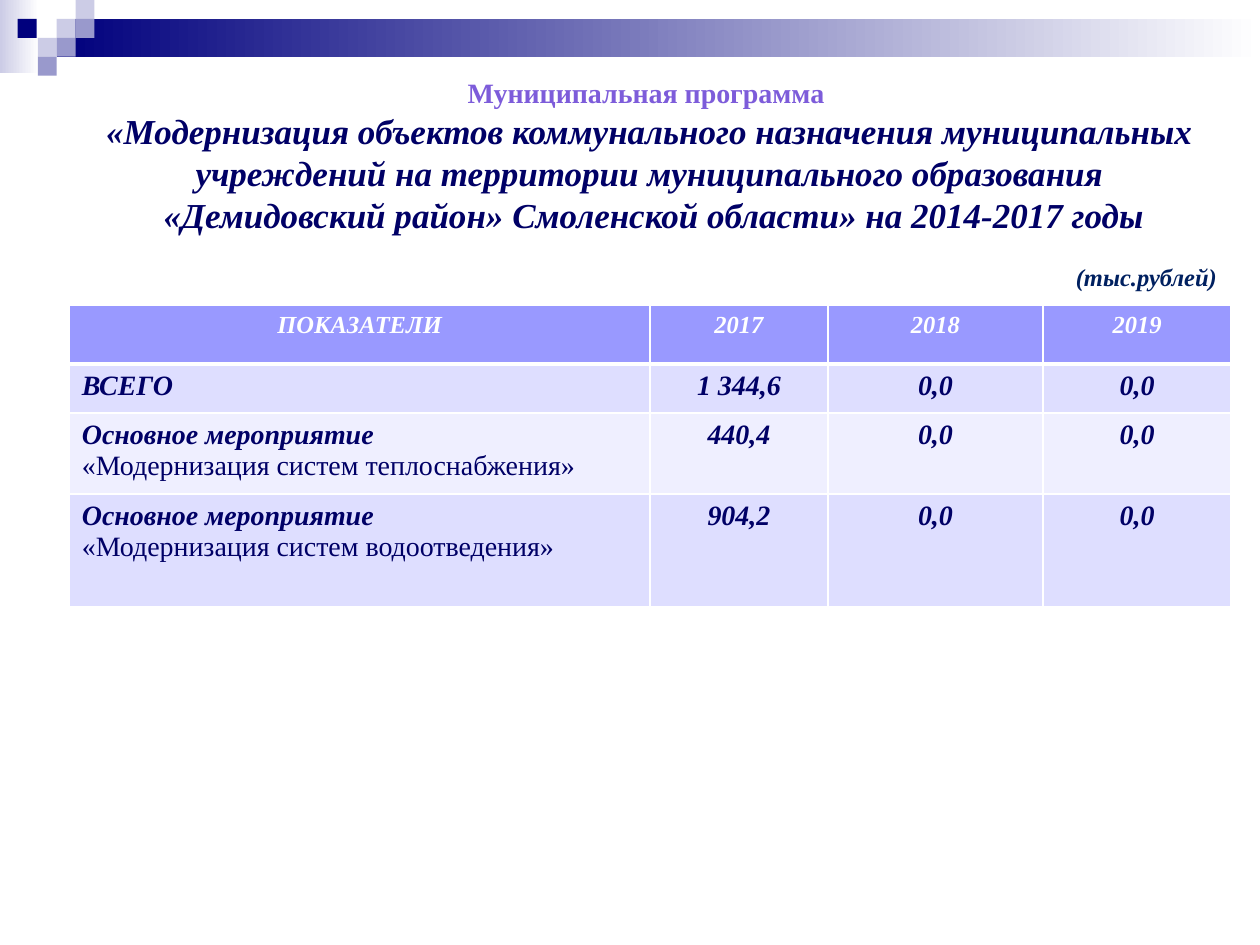
from dataclasses import dataclass

from lxml.etree import fromstring
from pptx import Presentation
from pptx.dml.color import RGBColor
from pptx.enum.shapes import MSO_SHAPE
from pptx.enum.text import MSO_AUTO_SIZE, PP_ALIGN
from pptx.util import Inches, Pt


@dataclass(frozen=True)
class Theme:
    """Colours, font and type sizes of the slide."""
    font: str = "Times New Roman"
    navy: str = "00007D"
    pale: str = "CCCCE6"
    mid: str = "9999CC"
    white: str = "FFFFFF"
    violet: str = "7D5CDA"
    ink: str = "000066"
    note: str = "002060"
    head: str = "9999FF"
    bands: tuple = ("DEDEFF", "EFEFFF")
    small: int = 14
    body: int = 16
    large: int = 20


THEME = Theme()
NS = "http://schemas.openxmlformats.org/drawingml/2006/main"
SIDE = 0.15
TILES = [
    (0.45, 0.15, THEME.pale), (0.6, 0, THEME.pale), (0.6, 0.15, THEME.mid),
    (0.3, 0.3, THEME.pale), (0.14, 0.15, THEME.navy),
    (0.45, 0.3, THEME.mid), (0.3, 0.45, THEME.mid),
]
BANDS = [((0, 0, 0.31, 0.58), THEME.pale), ((0.45, 0.15, 9.55, 0.3), THEME.navy)]
COLS = [4.61, 1.41, 1.71, 1.49]
ROWS = [0.47, 0.39, 0.64, 0.9]
STEP = "Основное мероприятие"
DATA = [
    (["ПОКАЗАТЕЛИ"], "2017", "2018", "2019"),
    (["ВСЕГО"], "1 344,6", "0,0", "0,0"),
    ([STEP, "«Модернизация систем теплоснабжения»"], "440,4", "0,0", "0,0"),
    ([STEP, "«Модернизация систем водоотведения»"], "904,2", "0,0", "0,0"),
]


def style(size, color, bold=True, italic=True):
    """Return the format values of a run."""
    return {"size": Pt(size), "color": color, "bold": bold, "italic": italic,
            "name": THEME.font}


TITLE = [
    ("Муниципальная программа ", style(THEME.body, THEME.violet, italic=False)),
    ("«Модернизация объектов коммунального назначения муниципальных учреждений "
     "на территории муниципального образования", style(THEME.large, THEME.ink)),
    (" «Демидовский район» Смоленской области» на 2014-2017 годы",
     style(THEME.large, THEME.ink)),
]


def write(frame, lines, align):
    """Fill a text frame with one styled paragraph per line."""
    for i, (text, form) in enumerate(lines):
        para = frame.add_paragraph() if i else frame.paragraphs[0]
        para.alignment = align
        run = para.add_run()
        run.text = text
        for key, value in form.items():
            if key == "color":
                run.font.color.rgb = RGBColor.from_string(value)
            else:
                setattr(run.font, key, value)


def add_text(slide, box, lines, align, wrap=True):
    """Add a text box that grows with its text."""
    frame = slide.shapes.add_textbox(*map(Inches, box)).text_frame
    frame.word_wrap = wrap
    frame.auto_size = MSO_AUTO_SIZE.SHAPE_TO_FIT_TEXT
    write(frame, lines, align)


def add_rect(slide, box, color, fade=False):
    """Add a plain rectangle, or one that fades to white."""
    shape = slide.shapes.add_shape(MSO_SHAPE.RECTANGLE, *map(Inches, box))
    shape.shadow.inherit = False
    shape.line.fill.background()
    if fade:
        shape.fill.gradient()
        shape.fill.gradient_angle = 0
        for stop, tint in zip(shape.fill.gradient_stops, (color, THEME.white)):
            stop.color.rgb = RGBColor.from_string(tint)
    else:
        shape.fill.solid()
        shape.fill.fore_color.rgb = RGBColor.from_string(color)


def add_edges(cell, row):
    """Draw white cell borders, thick under the header."""
    widths = {"L": 1, "R": 1, "T": 3 if row == 1 else 1, "B": 1 if row else 3}
    props = cell._tc.get_or_add_tcPr()
    for i, (edge, width) in enumerate(widths.items()):
        props.insert(i, fromstring(
            f'<a:ln{edge} xmlns:a="{NS}" w="{Pt(width)}"><a:solidFill>'
            f'<a:srgbClr val="{THEME.white}"/></a:solidFill></a:ln{edge}>'))


def fill_cell(cell, row, col, value):
    """Colour, frame and write one table cell."""
    color = THEME.bands[(row - 1) % 2] if row else THEME.head
    cell.fill.solid()
    cell.fill.fore_color.rgb = RGBColor.from_string(color)
    add_edges(cell, row)
    strong = style(THEME.body, THEME.ink) if row else style(THEME.small, THEME.white)
    plain = style(THEME.body, THEME.ink, False, False)
    lines = list(zip(value if col == 0 else [value], (strong, plain)))
    left = row and col == 0
    write(cell.text_frame, lines, PP_ALIGN.LEFT if left else PP_ALIGN.CENTER)


def add_grid(slide):
    """Add the table of yearly figures."""
    box = (0.55, 2.42, sum(COLS), sum(ROWS))
    table = slide.shapes.add_table(len(ROWS), len(COLS), *map(Inches, box)).table
    for col, width in zip(table.columns, COLS):
        col.width = Inches(width)
    for row, height in zip(table.rows, ROWS):
        row.height = Inches(height)
    for r, row in enumerate(DATA):
        for c, value in enumerate(row):
            fill_cell(table.cell(r, c), r, c, value)


def main():
    """Build the slide and save it."""
    deck = Presentation()
    deck.slide_width, deck.slide_height = Inches(10), Inches(7.5)
    slide = deck.slides.add_slide(deck.slide_layouts[6])
    for box, color in BANDS:
        add_rect(slide, box, color, fade=True)
    for left, top, color in TILES:
        add_rect(slide, (left, top, SIDE, SIDE), color)
    add_text(slide, (0.31, 0.55, 9.69, 1.38), TITLE, PP_ALIGN.CENTER)
    add_grid(slide)
    unit = [("(тыс.рублей)", style(THEME.small, THEME.note))]
    add_text(slide, (8.44, 2.03, 1.33, 0.34), unit, PP_ALIGN.LEFT, wrap=False)
    deck.save("out.pptx")


if __name__ == "__main__":
    main()
